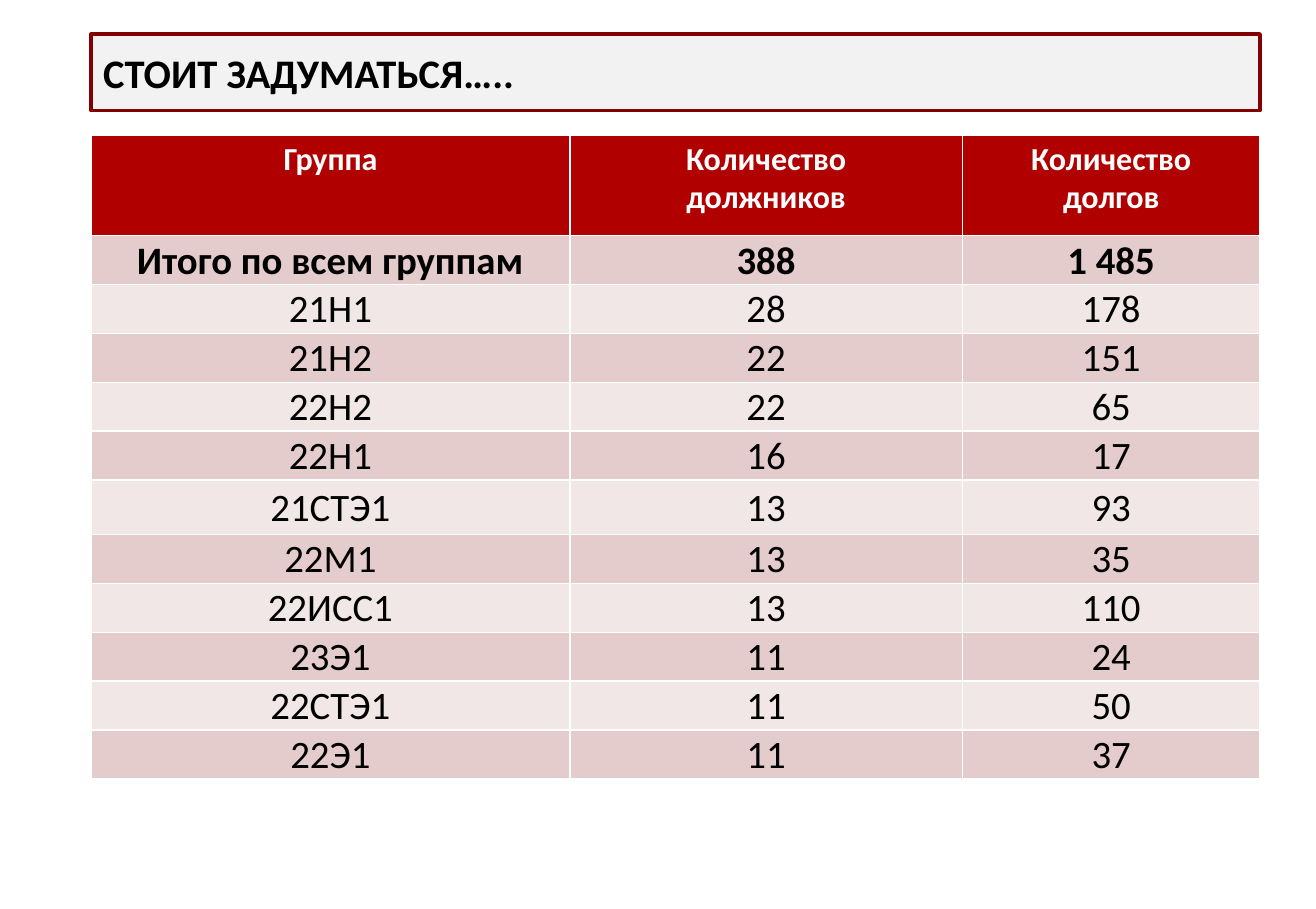
"""Build the slide with the table of student debts by group."""
from pptx import Presentation
from pptx.dml.color import RGBColor
from pptx.enum.shapes import MSO_SHAPE
from pptx.enum.text import MSO_ANCHOR, PP_ALIGN
from pptx.util import Inches, Pt

TITLE = "СТОИТ ЗАДУМАТЬСЯ….."
HEADER = ("Группа", "Количество\nдолжников", "Количество\nдолгов")
TOTAL = ("Итого по всем группам", "388", "1 485")
GROUPS = [
    ("21Н1", "28", "178"),
    ("21Н2", "22", "151"),
    ("22Н2", "22", "65"),
    ("22Н1", "16", "17"),
    ("21СТЭ1", "13", "93"),
    ("22М1", "13", "35"),
    ("22ИСС1", "13", "110"),
    ("23Э1", "11", "24"),
    ("22СТЭ1", "11", "50"),
    ("22Э1", "11", "37"),
]
ROWS = [HEADER, TOTAL, *GROUPS]
COLORS = {
    "header": "B00000",
    "band_dark": "E4CCCC",
    "band_light": "F2E7E7",
    "title_fill": "F2F2F2",
    "title_line": "820000",
    "white": "FFFFFF",
    "black": "000000",
}
FONT = "Calibri"
LEFT, WIDTH = 0.75, 9.62
COLUMN_WIDTHS = (3.94, 3.23, 2.45)
HEADER_HEIGHT, ROW_HEIGHT, TALL_HEIGHT = 0.83, 0.4, 0.45
TALL_GROUP = "21СТЭ1"
HEADER_MARGINS = (0.08, 0.04, 0.08, 0.04)
BODY_MARGINS = (0.01, 0.01, 0.01, 0)


def color(name):
    """Return the named colour."""
    return RGBColor.from_string(COLORS[name])


def format_text(text_frame, size, color_name, bold, alignment):
    """Apply one font and alignment to all the text in a frame."""
    for paragraph in text_frame.paragraphs:
        paragraph.alignment = alignment
        for run in paragraph.runs:
            run.font.name = FONT
            run.font.size = Pt(size)
            run.font.bold = bold
            run.font.color.rgb = color(color_name)


def row_height(index):
    """Return the height of a table row in inches."""
    if index == 0:
        return HEADER_HEIGHT
    return TALL_HEIGHT if ROWS[index][0] == TALL_GROUP else ROW_HEIGHT


def add_title(slide):
    """Add the framed title bar."""
    shape = slide.shapes.add_shape(
        MSO_SHAPE.RECTANGLE, Inches(LEFT), Inches(0.28), Inches(WIDTH), Inches(0.63))
    shape.shadow.inherit = False
    shape.fill.solid()
    shape.fill.fore_color.rgb = color("title_fill")
    shape.line.color.rgb = color("title_line")
    shape.line.width = Pt(2)
    shape.text_frame.text = TITLE
    shape.text_frame.word_wrap = True
    shape.text_frame.vertical_anchor = MSO_ANCHOR.MIDDLE
    format_text(shape.text_frame, 24, "black", True, PP_ALIGN.LEFT)


def fill_cell(cell, text, row_index):
    """Write and format one table cell."""
    is_header = row_index == 0
    band = "band_dark" if row_index % 2 else "band_light"
    margins = HEADER_MARGINS if is_header else BODY_MARGINS
    cell.fill.solid()
    cell.fill.fore_color.rgb = color("header" if is_header else band)
    cell.margin_left, cell.margin_top, cell.margin_right, cell.margin_bottom = map(Inches, margins)
    cell.vertical_anchor = MSO_ANCHOR.TOP if is_header else MSO_ANCHOR.MIDDLE
    cell.text_frame.text = text
    format_text(cell.text_frame, 19 if is_header else 23,
                "white" if is_header else "black", row_index < 2, PP_ALIGN.CENTER)


def add_debt_table(slide):
    """Add the table of debtors and debts."""
    heights = [row_height(index) for index in range(len(ROWS))]
    table = slide.shapes.add_table(
        len(ROWS), len(HEADER), Inches(LEFT), Inches(1.11),
        Inches(WIDTH), Inches(sum(heights))).table
    for column, width in zip(table.columns, COLUMN_WIDTHS):
        column.width = Inches(width)
    for row_index, values in enumerate(ROWS):
        table.rows[row_index].height = Inches(heights[row_index])
        for column_index, text in enumerate(values):
            fill_cell(table.cell(row_index, column_index), text, row_index)


def main():
    """Create and save the presentation."""
    presentation = Presentation()
    presentation.slide_width = Inches(10.83)
    presentation.slide_height = Inches(7.48)
    slide = presentation.slides.add_slide(presentation.slide_layouts[6])
    add_debt_table(slide)
    add_title(slide)
    presentation.save("out.pptx")


if __name__ == "__main__":
    main()
